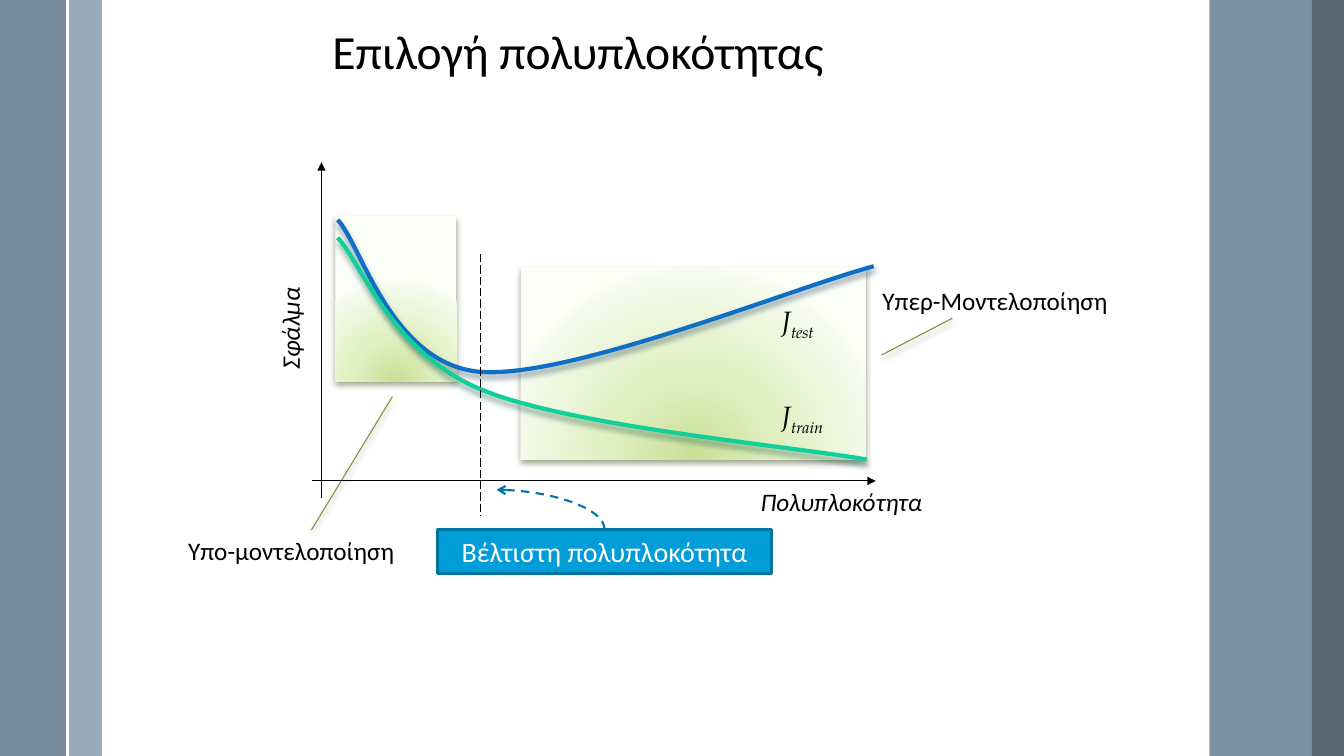
from lxml import etree
from pptx import Presentation
from pptx.dml.color import RGBColor
from pptx.enum.dml import MSO_LINE_DASH_STYLE as DASH
from pptx.enum.shapes import MSO_CONNECTOR as CONN, MSO_SHAPE as SHAPE
from pptx.enum.text import MSO_ANCHOR as ANCHOR, PP_ALIGN as ALIGN
from pptx.oxml import parse_xml
from pptx.oxml.ns import nsdecls, qn
from pptx.util import Cm, Pt

BODY, MATH = "Calibri", "TeX Gyre Pagella"
GLOW = [(0, "C9DF97"), (43, "E0F0C1"), (93, "F5FAEC"), (100, "FCFEF8")]
CURVES = [
    ("0F6FC6", "042747", [(0.64, 1.45), (1.24, 2.08), (1.98, 5.08), (4.22, 5.28),
                          (6.48, 5.46), (12.07, 3.18), (14.15, 2.62)]),
    ("10CF9B", "044A37", [(0.64, 1.9), (1.24, 2.54), (2.01, 4.8), (4.24, 5.72),
                          (6.45, 6.65), (11.96, 7.14), (13.97, 7.49)]),
]
ZONES = [
    ((5.26, 2.64, 8.69, 4.85), (0.457, 1.046, 0.266, 1.251)),
    ((0.58, 1.35, 3.05, 4.17), (1.093, 0.472, 1.898, -0.197)),
]


def color(value):
    """Turn a hex string into a colour."""
    return RGBColor.from_string(value)


def place(box, x, y):
    """Return the slide position of a point given in cm within a box."""
    return Cm(box[0] + x), Cm(box[1] + y)


def set_line(sp, hex_color, width, dash=None):
    """Set the colour, width and dash of an outline."""
    sp.line.color.rgb = color(hex_color)
    sp.line.width = Pt(width)
    if dash:
        sp.line.dash_style = dash


def add_shadow(sp, hex_color):
    """Give a shape a soft shadow that falls downwards."""
    sp.shadow.inherit = False
    sp._element.spPr.find(qn("a:effectLst")).append(parse_xml(
        f'<a:outerShdw {nsdecls("a")} blurRad="57150" dist="38100" dir="5400000" '
        f'algn="ctr" rotWithShape="0"><a:srgbClr val="{hex_color}">'
        '<a:alpha val="48000"/></a:srgbClr></a:outerShdw>'))


def add_rect(s, box, fill, alpha=100):
    """Add a plain rectangle without an outline."""
    sp = s.shapes.add_shape(SHAPE.RECTANGLE, *map(Cm, box))
    sp.shadow.inherit = False
    sp.fill.solid()
    sp.fill.fore_color.rgb = color(fill)
    sp.line.fill.background()
    if alpha < 100:
        clr = sp._element.spPr.find(qn("a:solidFill"))[0]
        etree.SubElement(clr, qn("a:alpha")).set("val", str(alpha * 1000))
    return sp


def add_line(s, start, end, hex_color, width, dash=None, tail=None, kind=CONN.STRAIGHT):
    """Add a connector, with an arrowhead at its end if asked for."""
    c = s.shapes.add_connector(kind, *start, *end)
    set_line(c, hex_color, width, dash)
    if tail:
        etree.SubElement(c.line._get_or_add_ln(), qn("a:tailEnd")).set("type", tail)
    etree.SubElement(c._element.spPr, qn("a:effectLst"))
    return c


def add_runs(sp, texts, size, font=BODY, hex_color="000000", italic=False):
    """Write one paragraph; every run after the first is a subscript."""
    p = sp.text_frame.paragraphs[0]
    for i, text in enumerate(texts):
        r = p.add_run()
        r.text = text
        r.font.size, r.font.name, r.font.italic = Pt(size), font, italic
        r.font.color.rgb = color(hex_color)
        if i:
            r.font._element.set("baseline", "-25000")
    return p


def add_label(s, box, x, y, w, h, texts, size=18, font=BODY, italic=False, wrap=True):
    """Add a text box at an offset within a box."""
    sp = s.shapes.add_textbox(*place(box, x, y), Cm(w), Cm(h))
    sp.text_frame.word_wrap = wrap
    add_runs(sp, texts, size, font, italic=italic)
    return sp


def draw_frame(s, box):
    """Draw the coloured bands at both sides of the slide."""
    x, y, w, h = box
    add_rect(s, (x + 1.73, y, 0.84, h), "9BAAB7")
    add_rect(s, (x, y, 1.7, h), "6A8093", 90)
    add_line(s, place(box, 1.7, 0), place(box, 1.7, h), "FFFFFF", 1.5)
    add_rect(s, (x + w - 3.39, y, 2.57, h), "6A8093", 87)
    add_rect(s, (x + w - 0.82, y, 0.82, h), "475562", 90)


def draw_title(s, box):
    """Write the slide title."""
    sp = add_label(s, box, 0, 0, *box[2:], ["Επιλογή πολυπλοκότητας"], 34)
    sp.text_frame.vertical_anchor = ANCHOR.MIDDLE
    sp.text_frame.paragraphs[0].line_spacing = 0.9


def draw_zone(s, box, at, adjustments):
    """Draw a glowing callout area with its leader line."""
    x, y, w, h = at
    sp = s.shapes.add_shape(SHAPE.LINE_CALLOUT_1_NO_BORDER, *place(box, x, y), Cm(w), Cm(h))
    for i, value in enumerate(adjustments):
        sp.adjustments[i] = value
    sp.fill.solid()
    stops = "".join(f'<a:gs pos="{pos * 1000}"><a:srgbClr val="{c}"/></a:gs>' for pos, c in GLOW)
    spPr = sp._element.spPr
    spPr.replace(spPr.find(qn("a:solidFill")), parse_xml(
        f'<a:gradFill {nsdecls("a")} rotWithShape="1"><a:gsLst>{stops}</a:gsLst>'
        '<a:path path="circle"><a:fillToRect l="50000" t="130000" r="50000" b="-30000"/>'
        '</a:path></a:gradFill>'))
    set_line(sp, "7B9135", 0.75)
    add_shadow(sp, "3A4519")


def draw_curve(s, box, hex_color, shadow, points):
    """Draw a smooth curve through cubic Bézier control points."""
    start, *rest = [place(box, *point) for point in points]
    builder = s.shapes.build_freeform(*start)
    builder.add_line_segments(rest, close=False)
    sp = builder.convert_to_shape()
    segments = list(sp._element.iter(qn("a:lnTo")))
    for i in range(0, len(segments), 3):
        bezier = etree.SubElement(segments[i].getparent(), qn("a:cubicBezTo"))
        for segment in segments[i:i + 3]:
            bezier.append(segment[0])
            segment.getparent().remove(segment)
    sp.fill.background()
    set_line(sp, hex_color, 3)
    add_shadow(sp, shadow)


def draw_plot(s, box):
    """Draw the zones, the error curves, the axes and the optimum line."""
    w, h = box[2:]
    for at, adjustments in ZONES:
        draw_zone(s, box, at, adjustments)
    for curve in CURVES:
        draw_curve(s, box, *curve)
    add_line(s, place(box, 0.23, h), place(box, 0.23, 0), "000000", 0.75, tail="triangle")
    add_line(s, place(box, 0, 8.03), place(box, w, 8.03), "000000", 0.75, tail="triangle")
    add_line(s, place(box, 4.24, 2.31), place(box, 4.24, 8.89), "000000", 0.75, DASH.LONG_DASH)


def draw_labels(s, box):
    """Name the axes, the curves, the zones and the optimum."""
    add_label(s, box, 14.43, 8.03, 5.21, 1.02, ["Πολυπλοκότητα"], italic=True)
    for name, y in (("train", 5.82), ("test", 3.43)):
        add_label(s, box, 14.96, y, 1.73, 1.12, ["J", name], 20, MATH, italic=True)
    sp = add_label(s, box, 2.31, 2.64, 1.27, 2.82, ["Σφάλμα"], italic=True)
    sp.text_frame._txBody.bodyPr.set("vert", "vert270")
    add_label(s, box, 0, 9.27, 5.92, 1.02, ["Υπο-μοντελοποίηση"], wrap=False)
    add_label(s, box, 17.5, 2.97, 6.4, 1.02, ["Υπερ-Μοντελοποίηση"], wrap=False)

    sp = add_rect(s, (box[0] + 6.53, box[1] + 9.25, 8.43, 1.12), "009DD9")
    set_line(sp, "0074A1", 2)
    sp.text_frame.word_wrap = True
    add_runs(sp, ["Βέλτιστη πολυπλοκότητα"], 20, hex_color="FFFFFF").alignment = ALIGN.CENTER
    c = add_line(s, place(box, 8.89, 10.11), place(box, 9.88, 7.39), "0074A1", 1.5,
                 DASH.DASH, "arrow", CONN.CURVE)
    c._element.spPr.find(qn("a:prstGeom")).set("prst", "curvedConnector2")
    c._element.spPr.find(qn("a:xfrm")).set("rot", "16200000")


def main():
    """Build the slide and save it."""
    prs = Presentation()
    prs.slide_width, prs.slide_height = Cm(33.87), Cm(19.05)
    s = prs.slides.add_slide(prs.slide_layouts[6])
    draw_frame(s, (0, 0, 33.87, 19.05))
    draw_title(s, (8.13, 0.53, 19.76, 1.68))
    draw_plot(s, (7.87, 4.09, 14.2, 8.46))
    draw_labels(s, (4.49, 4.09, 23.9, 10.37))
    prs.save("out.pptx")


if __name__ == "__main__":
    main()
